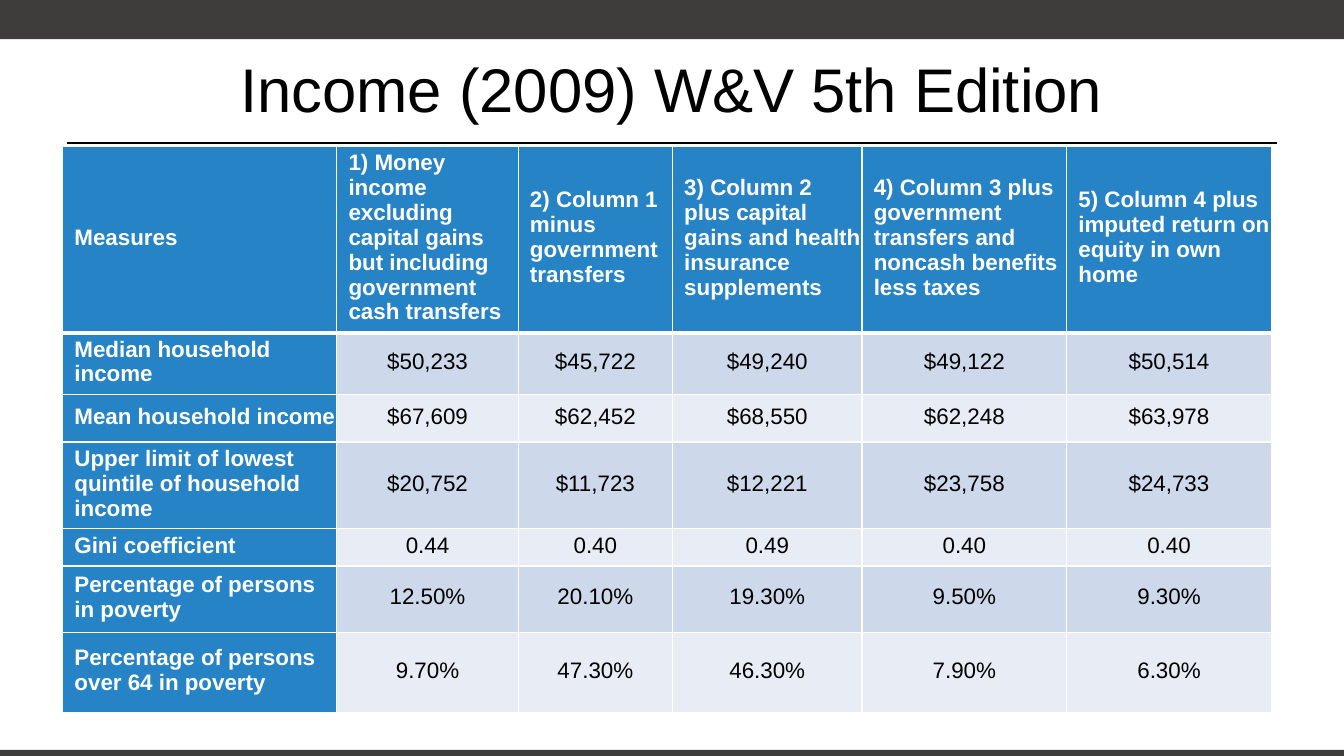
from lxml.etree import SubElement
from pptx import Presentation
from pptx.dml.color import RGBColor
from pptx.enum.shapes import MSO_CONNECTOR, MSO_SHAPE
from pptx.enum.text import MSO_ANCHOR, PP_ALIGN
from pptx.oxml.ns import qn
from pptx.util import Pt

BLACK = RGBColor(0x00, 0x00, 0x00)
WHITE = RGBColor(0xFF, 0xFF, 0xFF)
CHARCOAL = RGBColor(0x3E, 0x3D, 0x3C)
BLUE = RGBColor(0x26, 0x83, 0xC6)
DARK_BAND = RGBColor(0xCD, 0xD9, 0xEA)
LIGHT_BAND = RGBColor(0xE8, 0xED, 0xF5)

SLIDE_WIDTH, SLIDE_HEIGHT = 960, 540
MARGIN = 48
COLUMN_WIDTHS = [195.8, 129.6, 110.2, 135.4, 146.2, 146.2]
ROW_HEIGHTS = [97.2, 41, 33.8, 58.3, 19.4, 47.5, 57.6]

INCOME_MEASURES = [
    ["Measures",
     "1) Money income excluding capital gains but including government cash transfers",
     "2) Column 1 minus government transfers",
     "3) Column 2 plus capital gains and health insurance supplements",
     "4) Column 3 plus government transfers and noncash benefits less taxes",
     "5) Column 4 plus imputed return on equity in own home"],
    ["Median household income", "$50,233", "$45,722", "$49,240", "$49,122", "$50,514"],
    ["Mean household income", "$67,609", "$62,452", "$68,550", "$62,248", "$63,978"],
    ["Upper limit of lowest quintile of household income",
     "$20,752", "$11,723", "$12,221", "$23,758", "$24,733"],
    ["Gini coefficient", "0.44", "0.40", "0.49", "0.40", "0.40"],
    ["Percentage of persons in poverty", "12.50%", "20.10%", "19.30%", "9.50%", "9.30%"],
    ["Percentage of persons over 64 in poverty",
     "9.70%", "47.30%", "46.30%", "7.90%", "6.30%"],
]


def apply_format(target, values):
    for attribute, value in values.items():
        setattr(target, attribute, value)


class IncomeSlide:
    def __init__(self, presentation, font="Arial"):
        self.font = font
        self.slide = presentation.slides.add_slide(presentation.slide_layouts[5])

    def add_text(self, frame, text, size, color, align, bold=False):
        paragraph = frame.paragraphs[0]
        paragraph.alignment = align
        run = paragraph.add_run()
        run.text = text
        apply_format(run.font, {"name": self.font, "size": Pt(size), "bold": bold})
        run.font.color.rgb = color

    def title(self, text, left, top, width, height):
        heading = self.slide.shapes.title
        apply_format(heading, {"left": Pt(left), "top": Pt(top),
                               "width": Pt(width), "height": Pt(height)})
        heading.text_frame.vertical_anchor = MSO_ANCHOR.MIDDLE
        self.add_text(heading.text_frame, text, 44, BLACK, PP_ALIGN.CENTER)

    def bar(self, top, height):
        band = self.slide.shapes.add_shape(
            MSO_SHAPE.RECTANGLE, 0, Pt(top), Pt(SLIDE_WIDTH), Pt(height))
        band.shadow.inherit = False
        band.fill.solid()
        band.fill.fore_color.rgb = CHARCOAL
        band.line.fill.background()

    def rule(self, left, right, y):
        divider = self.slide.shapes.add_connector(
            MSO_CONNECTOR.STRAIGHT, Pt(left), Pt(y), Pt(right), Pt(y))
        divider.line.color.rgb = BLACK
        divider.line.width = Pt(1.25)
        SubElement(divider._element.spPr, qn("a:effectLst"))

    def border(self, cell, edge, width):
        properties = cell._tc.get_or_add_tcPr()
        line = SubElement(properties, qn(f"a:ln{edge}"), w=str(Pt(width)))
        fill = SubElement(line, qn("a:solidFill"))
        SubElement(fill, qn("a:srgbClr"), val=str(WHITE))

    def cell(self, cell, text, row, column):
        is_header = row == 0
        is_label = is_header or column == 0
        edges = {"L": 1, "R": 1}
        if is_header:
            edges["T"] = 1
        edges["B"] = 3 if is_header else 1
        for edge, width in edges.items():
            self.border(cell, edge, width)
        apply_format(cell, {"margin_left": Pt(8.4 if is_label else 0.7),
                            "margin_top": Pt(2.9), "margin_right": Pt(0.7),
                            "margin_bottom": Pt(5.8),
                            "vertical_anchor": MSO_ANCHOR.MIDDLE})
        cell.fill.solid()
        band = DARK_BAND if row % 2 else LIGHT_BAND
        cell.fill.fore_color.rgb = BLUE if is_label else band
        self.add_text(cell.text_frame, text, 16, WHITE if is_label else BLACK,
                      PP_ALIGN.LEFT if is_label else PP_ALIGN.CENTER, is_label)

    def table(self, rows, left, top, height):
        frame = self.slide.shapes.add_table(
            len(rows), len(rows[0]), Pt(left), Pt(top),
            Pt(sum(COLUMN_WIDTHS)), Pt(height))
        grid = frame.table
        for column, width in zip(grid.columns, COLUMN_WIDTHS):
            column.width = Pt(width)
        for row, row_height in zip(grid.rows, ROW_HEIGHTS):
            row.height = Pt(row_height)
        frame.height = Pt(height)
        for r, texts in enumerate(rows):
            for c, text in enumerate(texts):
                self.cell(grid.cell(r, c), text, r, c)


def main():
    presentation = Presentation()
    presentation.slide_width = Pt(SLIDE_WIDTH)
    presentation.slide_height = Pt(SLIDE_HEIGHT)
    income = IncomeSlide(presentation)
    income.bar(0, 28)
    income.bar(535.6, SLIDE_HEIGHT - 535.6)
    income.rule(MARGIN, SLIDE_WIDTH - MARGIN, 102)
    income.title("Income (2009) W&V 5th Edition", MARGIN, 18, SLIDE_WIDTH - 2 * MARGIN, 90)
    income.table(INCOME_MEASURES, 44.8, 104.6, 422.6)
    presentation.save("out.pptx")


if __name__ == "__main__":
    main()
